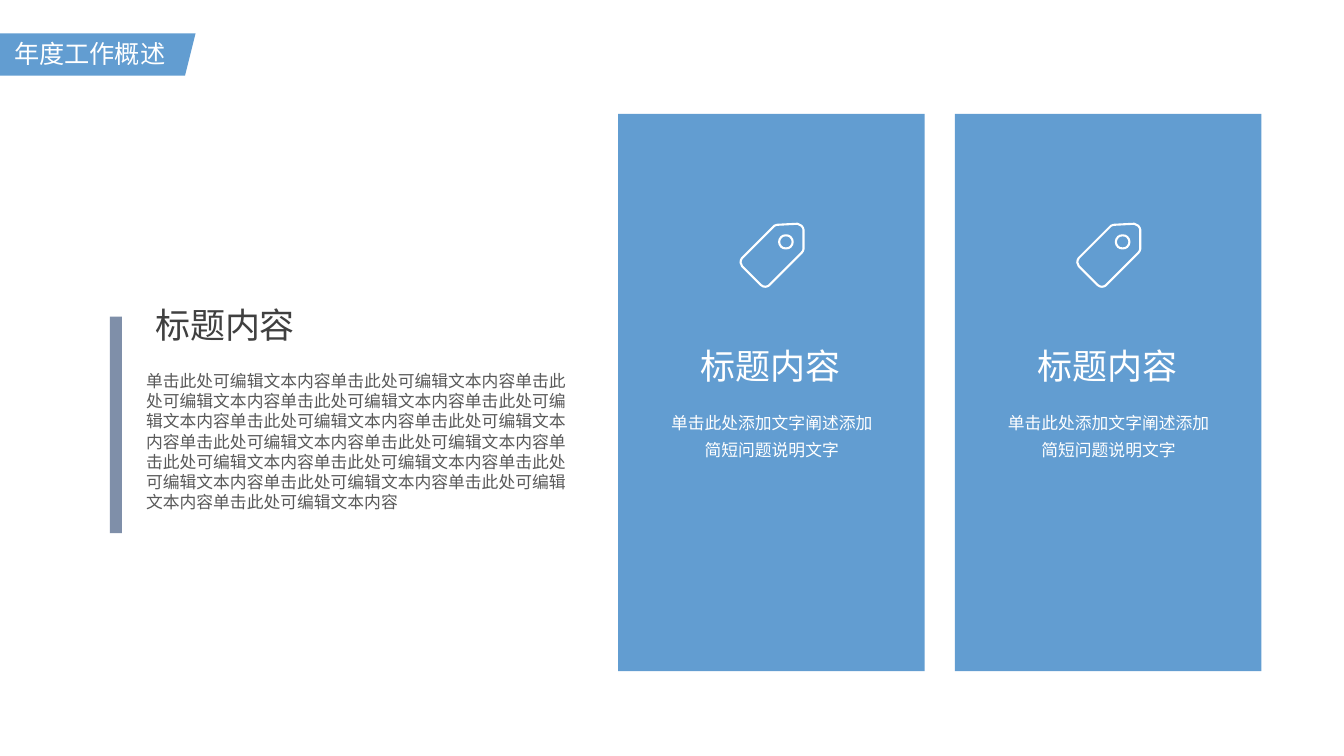
import pptx
import pptx.dml.color
import pptx.enum.shapes
import pptx.enum.text
import pptx.oxml
import pptx.oxml.ns
import pptx.util

Inches = pptx.util.Inches
Pt = pptx.util.Pt
SHAPES = pptx.enum.shapes.MSO_SHAPE
ALIGN = pptx.enum.text.PP_ALIGN
qn = pptx.oxml.ns.qn

COLORS = {
    "panel": "629DD1",
    "bar": "7F8FA9",
    "white": "FFFFFF",
    "heading": "404040",
    "body": "595959",
}
HEADING = "标题内容"
BODY = "单击此处可编辑文本内容" * 15
CARD_TEXT = "单击此处添加文字阐述添加简短问题说明文字"

# Tag corners: curve start, two control points, curve end; straight edges join them.
TAG_CORNERS = [
    ((0.61, 0.02), (0.60, 0.01), (0.59, 0), (0.57, 0)),
    ((0.38, 0.01), (0.37, 0.01), (0.36, 0.01), (0.34, 0.02)),
    ((0.02, 0.34), (0, 0.37), (0, 0.40), (0.02, 0.42)),
    ((0.21, 0.61), (0.23, 0.63), (0.27, 0.63), (0.29, 0.61)),
    ((0.61, 0.29), (0.62, 0.28), (0.63, 0.26), (0.63, 0.25)),
    ((0.63, 0.06), (0.63, 0.05), (0.62, 0.03), (0.61, 0.02)),
]
# Hole: a start point, then two control points and an end for each quarter.
TAG_HOLE = [
    (0.50, 0.23),
    (0.48, 0.25), (0.43, 0.25), (0.41, 0.23),
    (0.38, 0.20), (0.38, 0.16), (0.41, 0.13),
    (0.43, 0.11), (0.48, 0.11), (0.50, 0.13),
    (0.53, 0.16), (0.53, 0.20), (0.50, 0.23),
]


def rgb(name):
    return pptx.dml.color.RGBColor.from_string(COLORS[name])


def add_block(slide, kind, left, top, width, height, color):
    block = slide.shapes.add_shape(
        kind, Inches(left), Inches(top), Inches(width), Inches(height))
    block.shadow.inherit = False
    block.fill.solid()
    block.fill.fore_color.rgb = rgb(color)
    block.line.fill.background()


def write(holder, text, size, color, font="Arial", **paragraph_format):
    """Fill a text box or placeholder with one formatted paragraph."""
    frame = holder.text_frame
    frame_format = {
        "word_wrap": True,
        "auto_size": pptx.enum.text.MSO_AUTO_SIZE.SHAPE_TO_FIT_TEXT,
        "vertical_anchor": pptx.enum.text.MSO_ANCHOR.TOP,
    }
    for name, value in frame_format.items():
        setattr(frame, name, value)
    paragraph = frame.paragraphs[0]
    for name, value in {"alignment": ALIGN.LEFT, **paragraph_format}.items():
        setattr(paragraph, name, value)
    run = paragraph.add_run()
    run.text = text
    run.font.name = font
    run.font.size = Pt(size)
    run.font.color.rgb = rgb(color)


def add_text(slide, left, top, width, height, *args, **kwargs):
    box = slide.shapes.add_textbox(
        Inches(left), Inches(top), Inches(width), Inches(height))
    write(box, *args, **kwargs)


def curve_segments(shape, starts):
    """Merge three line segments from each start index into one cubic curve."""
    lines = shape.element.findall(".//" + qn("a:lnTo"))
    for start in starts:
        first, *others = lines[start:start + 3]
        curve = first.makeelement(qn("a:cubicBezTo"), {})
        first.addprevious(curve)
        for line in (first, *others):
            curve.append(line[0])
            line.getparent().remove(line)


def add_tag_icon(slide, left, top):
    outline = [point for corner in TAG_CORNERS for point in corner]
    outline, hole = ([(Inches(left + x), Inches(top + y)) for x, y in contour]
                     for contour in (outline, TAG_HOLE))
    builder = slide.shapes.build_freeform(*outline[0])
    builder.add_line_segments(outline[1:], close=True)
    builder.move_to(*hole[0])
    builder.add_line_segments(hole[1:], close=True)
    tag = builder.convert_to_shape()
    edges = len(outline) - 1
    curve_segments(tag, [*range(0, edges, 4),
                         *range(edges, edges + len(hole) - 1, 3)])
    tag.shadow.inherit = False
    tag.fill.background()
    tag.line.color.rgb = rgb("white")
    tag.line.width = Pt(1.5)


def add_card(slide, left, top, width, height):
    add_block(slide, SHAPES.RECTANGLE, left, top, width, height, "panel")
    add_tag_icon(slide, left + 1.21, top + 1.09)
    add_text(slide, left + 0.35, top + 2.86, 2.35, 0.6, CARD_TEXT, 12, "white",
             alignment=ALIGN.CENTER, line_spacing=1.3)
    add_text(slide, left + 0.72, top + 2.24, 1.6, 0.52, HEADING, 25, "white")


def add_overview(slide, left, top):
    """Heading and body text beside a vertical bar."""
    add_text(slide, left + 0.26, top + 0.67, 4.49, 1.78, BODY, 12, "body",
             font="Noto Sans CJK JP", space_before=Pt(4.4))
    add_text(slide, left + 0.35, top, 1.64, 0.52, HEADING, 25, "heading")
    add_block(slide, SHAPES.RECTANGLE, left, top + 0.18, 0.12, 2.15, "bar")


def add_title_banner(slide, left, top, width, height):
    add_block(slide, SHAPES.PARALLELOGRAM, left, top, width, height, "panel")
    title = slide.shapes.title
    place = {"left": left + 0.57, "top": top, "width": 1.81, "height": 0.41}
    for name, value in place.items():
        setattr(title, name, Inches(value))
    write(title, "年度工作概述", 18, "white")
    # The title stands in front of its banner.
    title.element.getparent().append(title.element)


def main():
    deck = pptx.Presentation()
    deck.slide_width, deck.slide_height = Inches(13.33), Inches(7.5)
    slide = deck.slides.add_slide(deck.slide_layouts[5])
    add_overview(slide, 1.09, 2.96)
    add_title_banner(slide, -0.53, 0.33, 2.47, 0.42)
    for column in range(2):
        add_card(slide, 6.13 + 3.34 * column, 1.13, 3.04, 5.53)
    deck.save("out.pptx")


if __name__ == "__main__":
    main()
